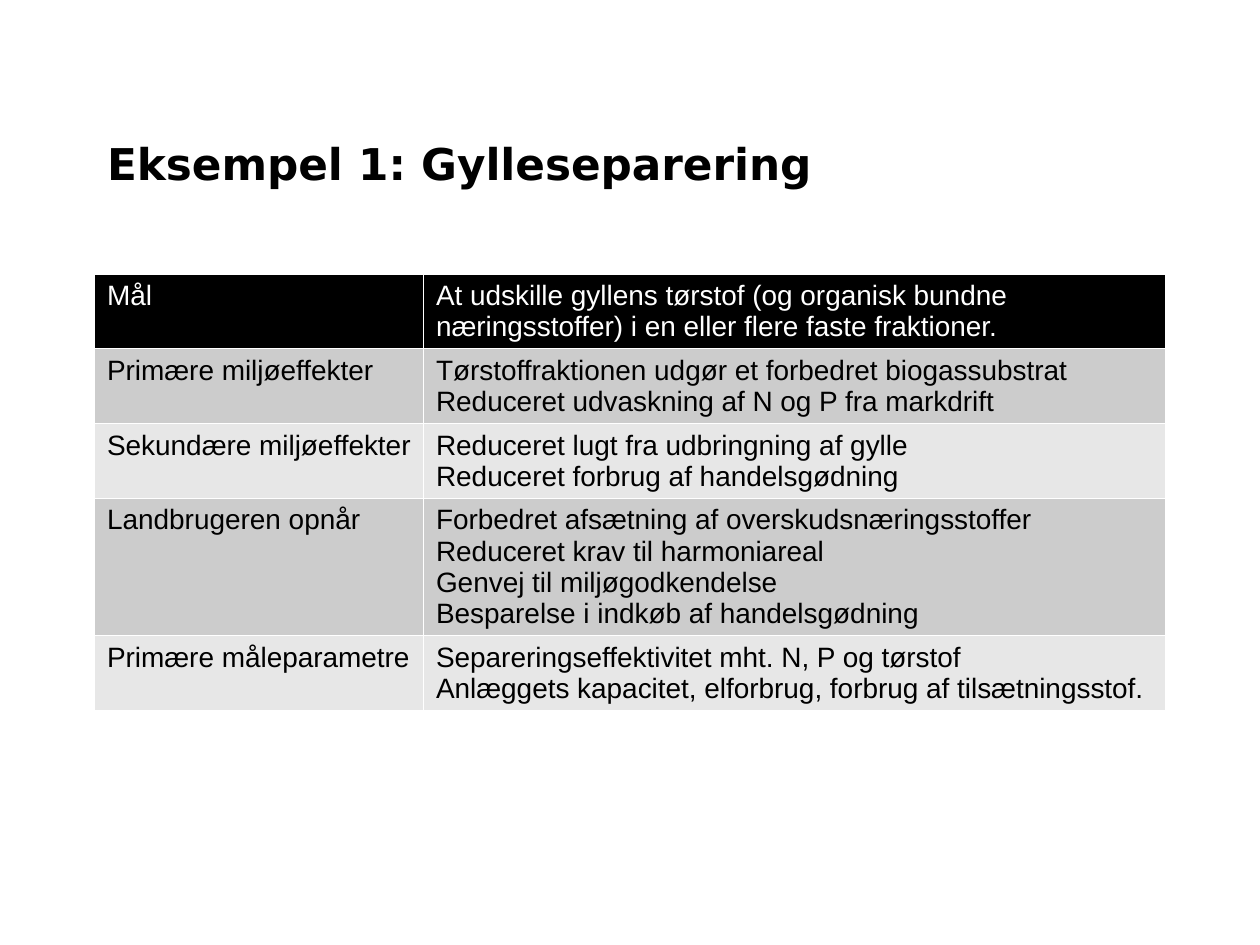
from pptx import Presentation
from pptx.dml.color import RGBColor
from pptx.enum import text
from pptx.util import Pt

TITLE = "Eksempel 1: Gylleseparering"
ROWS = [
    ("Mål", ["At udskille gyllens tørstof (og organisk bundne næringsstoffer) "
             "i en eller flere faste fraktioner."]),
    ("Primære miljøeffekter", ["Tørstoffraktionen udgør et forbedret biogassubstrat",
                               "Reduceret udvaskning af N og P fra markdrift"]),
    ("Sekundære miljøeffekter", ["Reduceret lugt fra udbringning af gylle",
                                 "Reduceret forbrug af handelsgødning"]),
    ("Landbrugeren opnår", ["Forbedret afsætning af overskudsnæringsstoffer",
                            "Reduceret krav til harmoniareal",
                            "Genvej til miljøgodkendelse",
                            "Besparelse i indkøb af handelsgødning"]),
    ("Primære måleparametre", ["Separeringseffektivitet mht. N, P og tørstof",
                               "Anlæggets kapacitet, elforbrug, forbrug af tilsætningsstof."]),
]
BLACK = RGBColor(0x00, 0x00, 0x00)
WHITE = RGBColor(0xFF, 0xFF, 0xFF)
DARK = RGBColor(0xCC, 0xCC, 0xCC)
LIGHT = RGBColor(0xE7, 0xE7, 0xE7)
LEFT, WIDTH = 54, 612
COLS = (188, 424)
ROW_H = 29.2


def style(frame, font, size, color, bold):
    for para in frame.paragraphs:
        para.alignment = text.PP_ALIGN.LEFT
        for run in para.runs:
            run.font.name = font
            run.font.size = Pt(size)
            run.font.bold = bold
            run.font.color.rgb = color


def add_title(slide):
    title = slide.shapes.title
    title.left, title.top = Pt(LEFT), Pt(48)
    title.width, title.height = Pt(WIDTH), Pt(90)
    frame = title.text_frame
    frame.text = TITLE
    frame.vertical_anchor = text.MSO_ANCHOR.MIDDLE
    style(frame, "DejaVu Sans", 25, BLACK, True)


def add_goals(slide):
    """Add the table; rows grow to fit their text."""
    holder = slide.shapes.add_table(len(ROWS), len(COLS), Pt(LEFT), Pt(156.5),
                                    Pt(WIDTH), Pt(ROW_H * len(ROWS)))
    table = holder.table
    for col, width in zip(table.columns, COLS):
        col.width = Pt(width)
    for i, (label, lines) in enumerate(ROWS):
        table.rows[i].height = Pt(ROW_H)
        fill = BLACK if i == 0 else DARK if i % 2 else LIGHT
        for cell, words in zip(table.rows[i].cells, (label, "\n".join(lines))):
            cell.fill.solid()
            cell.fill.fore_color.rgb = fill
            cell.text_frame.text = words
            style(cell.text_frame, "Arial", 16, BLACK if i else WHITE, False)


def main():
    deck = Presentation()
    deck.slide_width, deck.slide_height = Pt(720), Pt(540)
    slide = deck.slides.add_slide(deck.slide_layouts[5])
    add_title(slide)
    add_goals(slide)
    deck.save("out.pptx")


if __name__ == "__main__":
    main()
